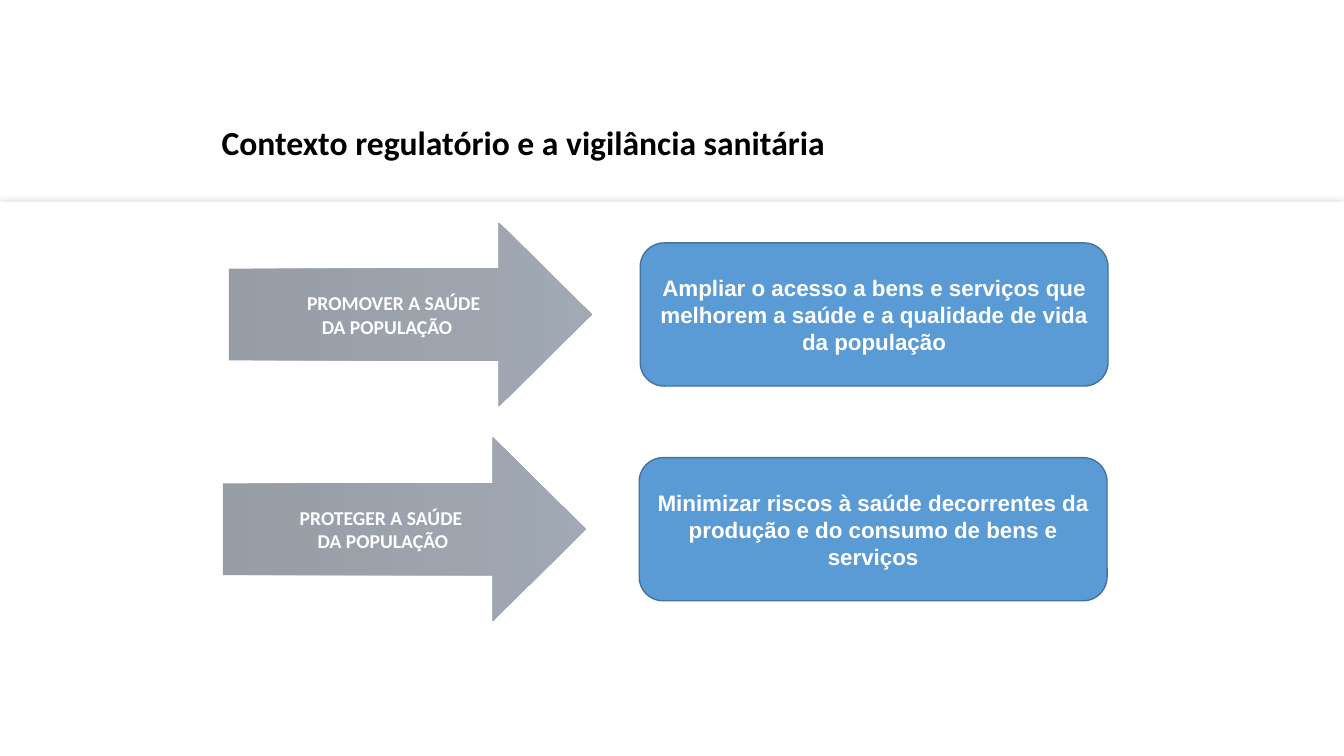
from pptx import Presentation
from pptx import util as u
from pptx.dml import color
from pptx.enum import shapes, text
from pptx.oxml import ns
from lxml import etree

# Content
TITLE = "Contexto regulatório e a vigilância sanitária"
# Each arrow line is (wording, left indent in inches)
ROWS = [
    {"arrow": (2.27, 2.21),
     "lines": [("PROMOVER A SAÚDE", 0.13), ("DA POPULAÇÃO", 0)],
     "card": (6.35, 2.41),
     "goal": "Ampliar o acesso a bens e serviços que melhorem a saúde "
             "e a qualidade de vida da população"},
    {"arrow": (2.21, 4.34),
     "lines": [("PROTEGER A SAÚDE", 0), ("DA POPULAÇÃO", 0.04)],
     "card": (6.34, 4.54),
     "goal": "Minimizar riscos à saúde decorrentes da produção "
             "e do consumo de bens e serviços"},
]
COLORS = {"white": "FFFFFF", "black": "000000", "shadow": "A6A6A6",
          "arrow_start": "313C4C", "arrow_end": "44546A",
          "card": "5B9BD5", "card_line": "43739E"}
ARROW_SIZE = (3.6, 1.82)
CARD_SIZE = (4.64, 1.42)


def rgb(name):
    return color.RGBColor.from_string(COLORS[name])


def add_shape(page, kind, place, size):
    shape = page.shapes.add_shape(kind, *map(u.Inches, place + size))
    shape.shadow.inherit = False
    shape.line.fill.background()
    return shape


def write_lines(box, lines, font, size, ink, align):
    frame = box.text_frame
    for number, (words, indent) in enumerate(lines):
        para = frame.add_paragraph() if number else frame.paragraphs[0]
        para.alignment = align
        if indent:
            para._p.get_or_add_pPr().set("marL", str(u.Inches(indent)))
        span = para.add_run()
        span.text = words
        span.font.name = font
        span.font.size = u.Pt(size)
        span.font.bold = True
        span.font.color.rgb = rgb(ink)


def set_alpha(color_node, percent):
    etree.SubElement(color_node, ns.qn("a:alpha"), val=str(percent * 1000))


def add_panel(page):
    panel = add_shape(page, shapes.MSO_SHAPE.RECTANGLE, (0, 2), (13.34, 5.5))
    panel.fill.solid()
    panel.fill.fore_color.rgb = rgb("white")
    effects = panel._element.spPr.find(ns.qn("a:effectLst"))
    glow = etree.SubElement(effects, ns.qn("a:outerShdw"),
                            blurRad=str(u.Pt(5)), dist="0", dir="0")
    tint = etree.SubElement(glow, ns.qn("a:srgbClr"), val=COLORS["shadow"])
    set_alpha(tint, 42)


def add_title(page):
    box = page.shapes.add_textbox(*map(u.Inches, (2.1, 1.16, 7.4, 0.51)))
    box.text_frame.word_wrap = True
    write_lines(box, [(TITLE, 0)], "Calibri", 24, "black", text.PP_ALIGN.LEFT)


def add_arrow(page, place, lines):
    arrow = add_shape(page, shapes.MSO_SHAPE.RIGHT_ARROW, place, ARROW_SIZE)
    arrow.adjustments[0] = 0.5
    arrow.adjustments[1] = 0.506
    arrow.fill.gradient()
    arrow.fill.gradient_angle = 0
    for stop, name in zip(arrow.fill.gradient_stops, ("arrow_start", "arrow_end")):
        stop.color.rgb = rgb(name)
    for tint in arrow._element.spPr.iter(ns.qn("a:srgbClr")):
        set_alpha(tint, 50)
    arrow.text_frame.word_wrap = False
    arrow.text_frame.vertical_anchor = text.MSO_ANCHOR.MIDDLE
    write_lines(arrow, lines, "Calibri", 14, "white", text.PP_ALIGN.CENTER)


def add_card(page, place, goal):
    card = add_shape(page, shapes.MSO_SHAPE.ROUNDED_RECTANGLE, place, CARD_SIZE)
    card.fill.solid()
    card.fill.fore_color.rgb = rgb("card")
    card.line.color.rgb = rgb("card_line")
    card.line.width = u.Pt(1)
    card.text_frame.word_wrap = True
    card.text_frame.vertical_anchor = text.MSO_ANCHOR.MIDDLE
    write_lines(card, [(goal, 0)], "Arial", 16, "white", text.PP_ALIGN.CENTER)


def main():
    deck = Presentation()
    deck.slide_width = u.Inches(13.33)
    deck.slide_height = u.Inches(7.5)
    page = deck.slides.add_slide(deck.slide_layouts[6])

    # Heading and lower panel
    add_panel(page)
    add_title(page)

    # One arrow and one card per aim
    for row in ROWS:
        add_arrow(page, row["arrow"], row["lines"])
        add_card(page, row["card"], row["goal"])

    deck.save("out.pptx")


if __name__ == "__main__":
    main()
